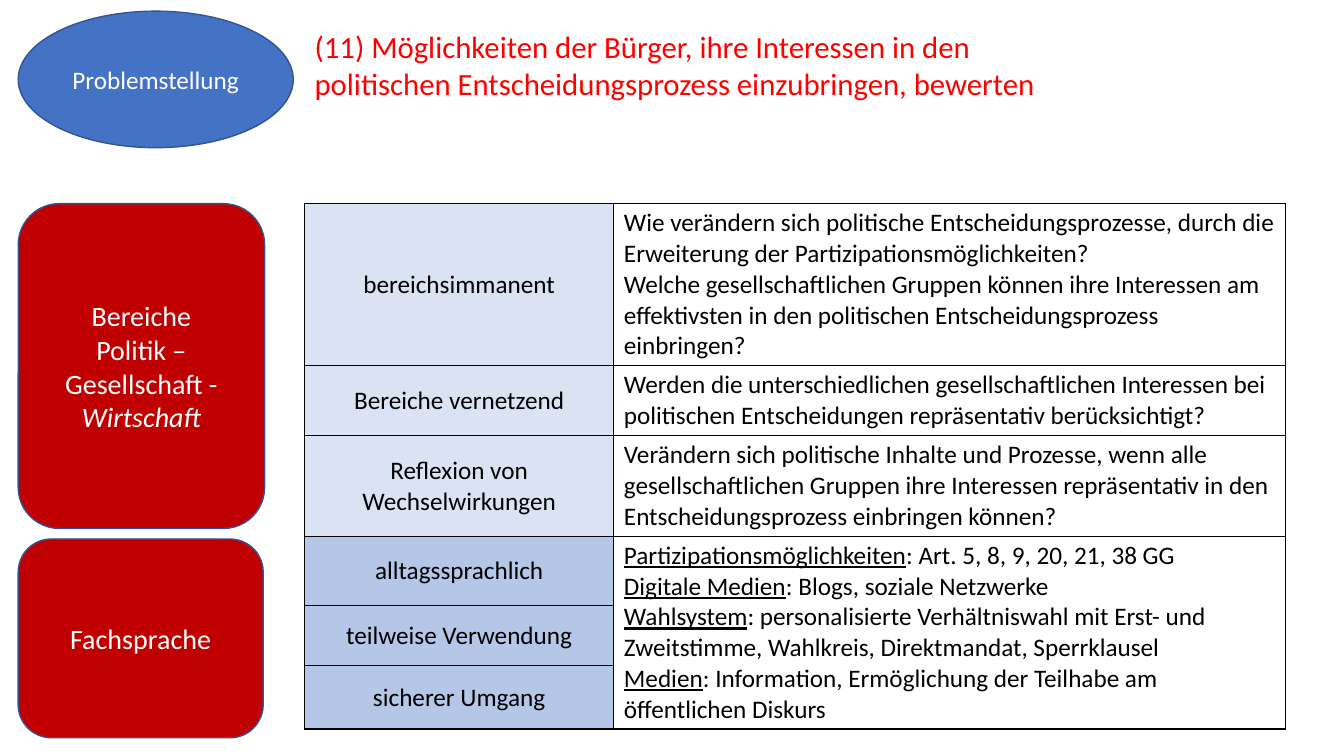
from lxml import etree
from pptx import Presentation
from pptx.dml.color import RGBColor
from pptx.enum.shapes import MSO_SHAPE
from pptx.enum.text import MSO_ANCHOR, MSO_AUTO_SIZE, PP_ALIGN
from pptx.oxml.ns import qn
from pptx.util import Pt

OVAL, ROUNDED = MSO_SHAPE.OVAL, MSO_SHAPE.ROUNDED_RECTANGLE
TOP, MIDDLE = MSO_ANCHOR.TOP, MSO_ANCHOR.MIDDLE
LEFT, CENTER = PP_ALIGN.LEFT, PP_ALIGN.CENTER
NO_AUTOSIZE = MSO_AUTO_SIZE.NONE

FONT = "Calibri"
BLACK = RGBColor(0x00, 0x00, 0x00)
WHITE = RGBColor(0xFF, 0xFF, 0xFF)
RED = RGBColor(0xFF, 0x00, 0x00)
DARK_RED = RGBColor(0xC0, 0x00, 0x00)
BLUE = RGBColor(0x44, 0x72, 0xC4)
OUTLINE = RGBColor(0x32, 0x54, 0x91)
PALE_BLUE = RGBColor(0xDA, 0xE3, 0xF3)
LIGHT_BLUE = RGBColor(0xB4, 0xC7, 0xE7)

PLAIN, ITALIC, UNDERLINE = "plain", "italic", "underline"

TITLE = ("(11) Möglichkeiten der Bürger, ihre Interessen in den "
         "politischen Entscheidungsprozess einzubringen, bewerten")

LABELS = [
    (OVAL, (13, 8, 196.5, 97.5), BLUE, 18, [[("Problemstellung", PLAIN)]]),
    (ROUNDED, (13, 145.5, 176, 232), DARK_RED, 20,
     [[("Bereiche", PLAIN)],
      [("Politik – Gesellschaft - ", PLAIN), ("Wirtschaft", ITALIC)]]),
    (ROUNDED, (13, 385, 175, 142), DARK_RED, 20, [[("Fachsprache", PLAIN)]]),
]

TERMS = [
    ("Partizipationsmöglichkeiten", ": Art. 5, 8, 9, 20, 21, 38 GG"),
    ("Digitale Medien", ": Blogs, soziale Netzwerke"),
    ("Wahlsystem", ": personalisierte Verhältniswahl mit Erst- und "
                   "Zweitstimme, Wahlkreis, Direktmandat, Sperrklausel"),
    ("Medien", ": Information, Ermöglichung der Teilhabe am öffentlichen Diskurs"),
]

ROWS = [
    ("bereichsimmanent", PALE_BLUE, 115.7,
     [[("Wie verändern sich politische Entscheidungsprozesse, durch die "
        "Erweiterung der Partizipationsmöglichkeiten?", PLAIN)],
      [("Welche gesellschaftlichen Gruppen können ihre Interessen am "
        "effektivsten in den politischen Entscheidungsprozess einbringen?", PLAIN)]]),
    ("Bereiche vernetzend", PALE_BLUE, 50,
     [[("Werden die unterschiedlichen gesellschaftlichen Interessen bei "
        "politischen Entscheidungen repräsentativ berücksichtigt?", PLAIN)]]),
    ("Reflexion von Wechselwirkungen", PALE_BLUE, 72,
     [[("Verändern sich politische Inhalte und Prozesse, wenn alle "
        "gesellschaftlichen Gruppen ihre Interessen repräsentativ in den "
        "Entscheidungsprozess einbringen können?", PLAIN)]]),
    ("alltagssprachlich", LIGHT_BLUE, 49.5,
     [[(term, UNDERLINE), (meaning, PLAIN)] for term, meaning in TERMS]),
    ("teilweise Verwendung", LIGHT_BLUE, 43, None),
    ("sicherer Umgang", LIGHT_BLUE, 45, None),
]
COLUMN_WIDTHS = (221, 480)
TABLE_LEFT, TABLE_TOP = 217.5, 145.5
CELL_MARGIN = 2.9
TERMS_FIRST, TERMS_LAST = 3, 5


def write(frame, paragraphs, size, color, align):
    for index, spans in enumerate(paragraphs):
        para = frame.paragraphs[0] if index == 0 else frame.add_paragraph()
        para.alignment = align
        for text, style in spans:
            span = para.add_run()
            span.text = text
            span.font.name = FONT
            span.font.size = Pt(size)
            span.font.color.rgb = color
            if style == ITALIC:
                span.font.italic = True
            elif style == UNDERLINE:
                span.font.underline = True


def add_label(page, kind, bounds, fill, size, paragraphs):
    label = page.shapes.add_shape(kind, *map(Pt, bounds))
    label.shadow.inherit = False
    label.fill.solid()
    label.fill.fore_color.rgb = fill
    label.line.color.rgb = OUTLINE
    label.line.width = Pt(1)
    label.text_frame.word_wrap = True
    label.text_frame.vertical_anchor = MIDDLE
    write(label.text_frame, paragraphs, size, WHITE, CENTER)


def format_cell(cell, fill, anchor):
    properties = cell._tc.get_or_add_tcPr()
    for side in ("a:lnL", "a:lnR", "a:lnT", "a:lnB"):
        border = etree.SubElement(properties, qn(side), w=str(Pt(1)))
        solid = etree.SubElement(border, qn("a:solidFill"))
        etree.SubElement(solid, qn("a:srgbClr"), val=str(BLACK))
    cell.fill.solid()
    cell.fill.fore_color.rgb = fill
    cell.vertical_anchor = anchor
    cell.margin_top = cell.margin_bottom = Pt(CELL_MARGIN)


def add_title(page):
    title = page.shapes.title
    title.left, title.top, title.width, title.height = map(Pt, (217.5, 16, 555, 60.5))
    frame = title.text_frame
    frame.word_wrap = True
    frame.auto_size = NO_AUTOSIZE
    frame.vertical_anchor = TOP
    write(frame, [[(TITLE, PLAIN)]], 22, RED, LEFT)


def add_questions(page):
    height = sum(row[2] for row in ROWS)
    table = page.shapes.add_table(
        len(ROWS), len(COLUMN_WIDTHS), Pt(TABLE_LEFT), Pt(TABLE_TOP),
        Pt(sum(COLUMN_WIDTHS)), Pt(height)).table
    table.first_row = table.horz_banding = False
    for column, width in zip(table.columns, COLUMN_WIDTHS):
        column.width = Pt(width)
    table.cell(TERMS_FIRST, 1).merge(table.cell(TERMS_LAST, 1))
    for index, (level, fill, row_height, paragraphs) in enumerate(ROWS):
        table.rows[index].height = Pt(row_height)
        heading, detail = table.cell(index, 0), table.cell(index, 1)
        format_cell(heading, fill, MIDDLE)
        format_cell(detail, WHITE, TOP)
        write(heading.text_frame, [[(level, PLAIN)]], 18, BLACK, CENTER)
        if paragraphs:
            write(detail.text_frame, paragraphs, 18, BLACK, LEFT)


def main():
    deck = Presentation()
    deck.slide_width, deck.slide_height = Pt(960), Pt(540)
    page = deck.slides.add_slide(deck.slide_layouts.get_by_name("Title Only"))
    add_title(page)
    for label in LABELS:
        add_label(page, *label)
    add_questions(page)
    deck.save("out.pptx")


if __name__ == "__main__":
    main()
